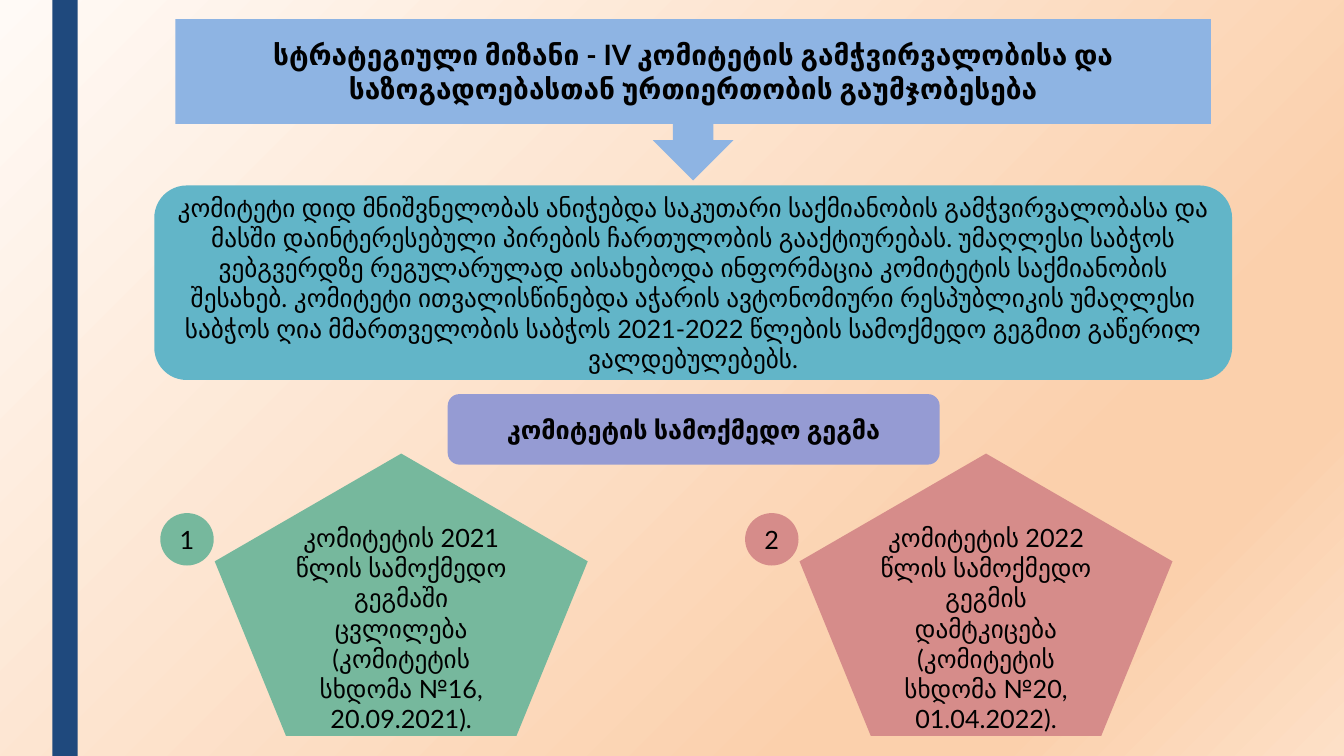
import lxml.etree
import pptx
import pptx.dml.color
import pptx.enum.shapes
import pptx.enum.text
import pptx.oxml.ns
import pptx.util

SHAPES = pptx.enum.shapes.MSO_SHAPE
EMU_PER_PX = 9144
FONT = "Lato"
COLORS = {
    "text": "000000",
    "stripe": "1F497D",
    "goal": "8EB4E3",
    "summary": "62B5C8",
    "plan": "959BD3",
    "first": "76B89D",
    "second": "D68C8A",
}
BACKGROUND_STOPS = [(0, "FFFAF6"), (74, "FBD0AC"), (83, "FBD0AC"), (100, "FDE0C7")]
GOAL = (
    "სტრატეგიული მიზანი - IV კომიტეტის გამჭვირვალობისა და "
    "საზოგადოებასთან ურთიერთობის გაუმჯობესება"
)
SUMMARY = (
    "კომიტეტი დიდ მნიშვნელობას ანიჭებდა საკუთარი საქმიანობის გამჭვირვალობასა და "
    "მასში დაინტერესებული პირების ჩართულობის გააქტიურებას. უმაღლესი საბჭოს "
    "ვებგვერდზე რეგულარულად აისახებოდა ინფორმაცია კომიტეტის საქმიანობის "
    "შესახებ. კომიტეტი ითვალისწინებდა აჭარის ავტონომიური რესპუბლიკის უმაღლესი "
    "საბჭოს ღია მმართველობის საბჭოს 2021-2022 წლების სამოქმედო გეგმით გაწერილ "
    "ვალდებულებებს."
)
PLAN = "კომიტეტის სამოქმედო გეგმა"
ACTIONS = [
    ("first", "კომიტეტის 2021 წლის სამოქმედო გეგმაში ცვლილება "
              "(კომიტეტის სხდომა №16, 20.09.2021)."),
    ("second", "კომიტეტის 2022 წლის სამოქმედო გეგმის დამტკიცება "
               "(კომიტეტის სხდომა №20, 01.04.2022)."),
]
ACTION_LEFT, ACTION_STEP = 213, 580
BADGE_OFFSET = 54


def px(length):
    return pptx.util.Emu(length * EMU_PER_PX)


def rgb(color):
    return pptx.dml.color.RGBColor.from_string(COLORS[color])


def paint_background(slide):
    """Fill the background with a diagonal gradient of several stops."""
    fill = slide.background.fill
    fill.gradient()
    fill.gradient_angle = 315
    qn = pptx.oxml.ns.qn
    stop_list = slide.element.find(".//" + qn("a:gsLst"))
    for stop in list(stop_list):
        stop_list.remove(stop)
    for percent, color in BACKGROUND_STOPS:
        stop = lxml.etree.SubElement(stop_list, qn("a:gs"), pos=str(percent * 1000))
        lxml.etree.SubElement(stop, qn("a:srgbClr"), val=color)


def add_box(slide, kind, bounds, color):
    shape = slide.shapes.add_shape(kind, *map(px, bounds))
    shape.shadow.inherit = False
    shape.fill.solid()
    shape.fill.fore_color.rgb = rgb(color)
    shape.line.fill.background()
    return shape


def add_text_box(slide, kind, bounds, color, text, size=18, bold=False, side_margin=10):
    frame = add_box(slide, kind, bounds, color).text_frame
    frame.word_wrap = True
    frame.vertical_anchor = pptx.enum.text.MSO_ANCHOR.MIDDLE
    frame.margin_left = frame.margin_right = px(side_margin)
    paragraph = frame.paragraphs[0]
    paragraph.alignment = pptx.enum.text.PP_ALIGN.CENTER
    run = paragraph.add_run()
    run.text = text
    run.font.name = FONT
    run.font.size = pptx.util.Pt(size)
    run.font.bold = bold
    run.font.color.rgb = rgb("text")


def add_action(slide, number, color, text):
    """Add a pentagon with its numbered badge at the left."""
    left = ACTION_LEFT + (number - 1) * ACTION_STEP
    add_text_box(slide, SHAPES.REGULAR_PENTAGON, (left, 450, 370, 280), color, text,
                 side_margin=6)
    add_text_box(slide, SHAPES.OVAL, (left - BADGE_OFFSET, 509, 53, 52), color, str(number))


def main():
    presentation = pptx.Presentation()
    presentation.slide_width = px(1333)
    presentation.slide_height = px(750)
    slide = presentation.slides.add_slide(presentation.slide_layouts[6])

    paint_background(slide)
    add_box(slide, SHAPES.RECTANGLE, (52, 0, 25, 750), "stripe")
    add_text_box(slide, SHAPES.DOWN_ARROW_CALLOUT, (174, 19, 1027, 160), "goal", GOAL,
                 size=20, bold=True)
    add_text_box(slide, SHAPES.ROUNDED_RECTANGLE, (153, 184, 1069, 193), "summary", SUMMARY)
    for number, (color, text) in enumerate(ACTIONS, start=1):
        add_action(slide, number, color, text)
    add_text_box(slide, SHAPES.ROUNDED_RECTANGLE, (444, 391, 488, 70), "plan", PLAN, bold=True)

    presentation.save("out.pptx")


if __name__ == "__main__":
    main()
